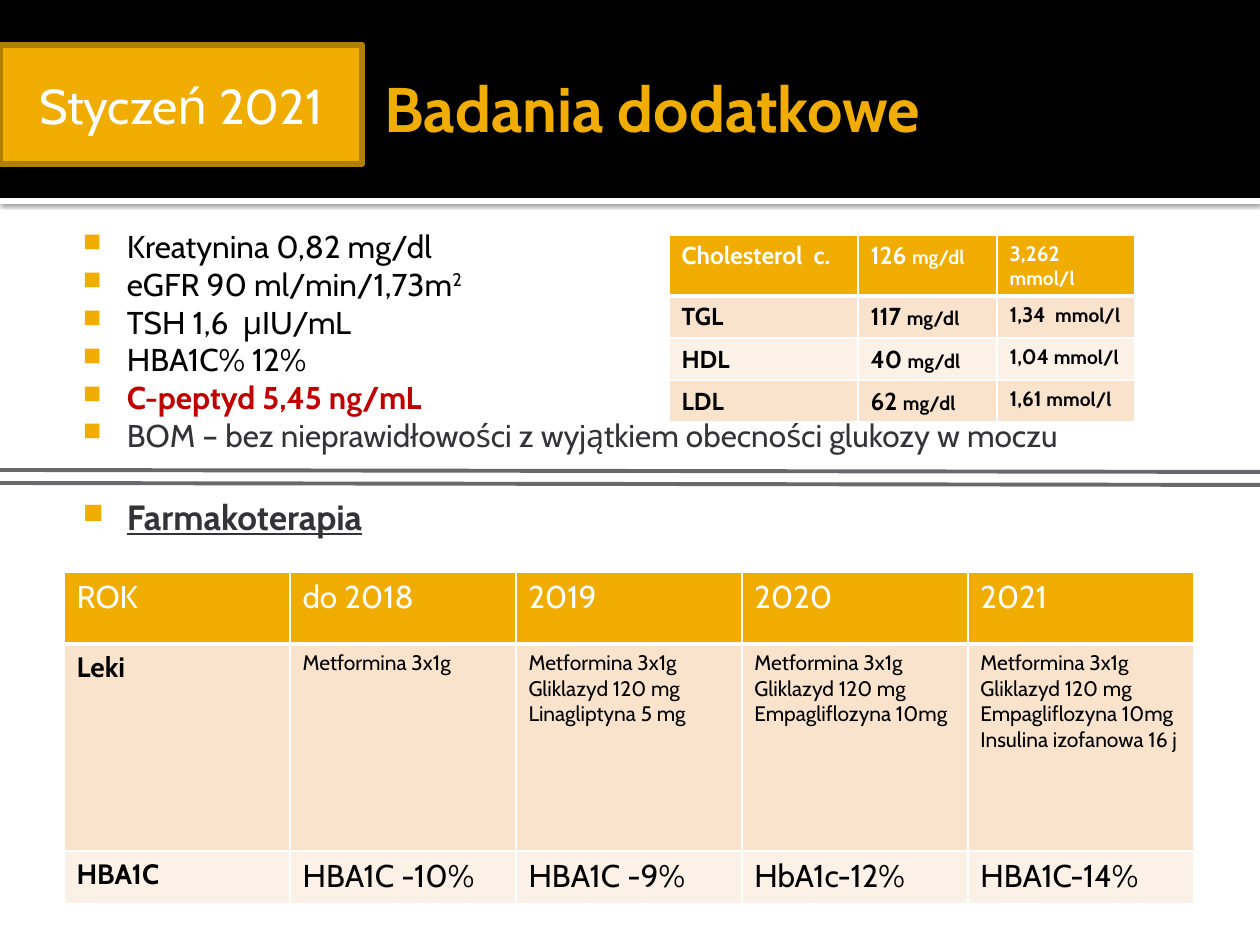
from lxml.etree import SubElement as Sub
from pptx import Presentation
from pptx.dml.color import RGBColor
from pptx.enum.shapes import MSO_CONNECTOR as LINE, MSO_SHAPE as SHAPE
from pptx.enum.text import MSO_ANCHOR as ANCHOR, PP_ALIGN as ALIGN
from pptx.oxml import parse_xml
from pptx.oxml.ns import nsdecls, qn
from pptx.util import Pt

GOLD, WHITE, BLACK, DARK, RED = "F0AD00", "FFFFFF", "000000", "343437", "C00000"
BANDS = ["F9E3CC", "FCF1E7"]
rgb = RGBColor.from_string


def px(*nums):
    return [round(n * 914400 / 126) for n in nums]


def write(par, text, size, hue, bold=False):
    run = par.add_run()
    run.text = text
    run.font.name = "Cabin"
    run.font.size = Pt(size)
    run.font.bold = bold
    run.font.color.rgb = rgb(hue)
    return run


deck = Presentation()
deck.slide_width, deck.slide_height = px(1260, 945)
slide = deck.slides.add_slide(deck.slide_layouts[6])
shapes = slide.shapes

bars = []
for spot, hue in [((0, 198, 1260, 6), WHITE), ((0, 0, 1260, 198), BLACK),
                  ((0, 45, 362, 119), GOLD)]:
    bar = shapes.add_shape(SHAPE.RECTANGLE, *px(*spot))
    bar.shadow.inherit = False
    bar.fill.solid()
    bar.fill.fore_color.rgb = rgb(hue)
    bar.line.fill.background()
    bars.append(bar)
strip, band, badge = bars

glow = strip._element.spPr.find(qn("a:effectLst"))
glow.append(parse_xml(
    f'<a:outerShdw {nsdecls("a")} blurRad="31750" dist="10160" dir="5400000">'
    '<a:srgbClr val="000000"><a:alpha val="60000"/></a:srgbClr></a:outerShdw>'))

badge.line.color.rgb = rgb("B28000")
badge.line.width = Pt(3.78)
badge.text_frame.vertical_anchor = ANCHOR.MIDDLE
par = badge.text_frame.paragraphs[0]
par.alignment = ALIGN.CENTER
write(par, "Styczeń 2021", 28, WHITE)

title = shapes.add_textbox(*px(372, 21, 825, 173)).text_frame
title.word_wrap = True
title.vertical_anchor = ANCHOR.MIDDLE
write(title.paragraphs[0], "Badania dodatkowe", 36, GOLD, True)

body = shapes.add_textbox(*px(59, 214, 1134, 638)).text_frame
body.word_wrap = True
body.margin_left, body.margin_top = px(8, 13)
items = [
    ("Kreatynina 0,82 mg/dl", 18, BLACK, False),
    ("eGFR 90 ml/min/1,73m", 18, BLACK, False),
    ("TSH 1,6  μIU/mL", 18, BLACK, False),
    ("HBA1C% 12%", 18, BLACK, False),
    ("C-peptyd 5,45 ng/mL", 18, RED, True),
    ("BOM – bez nieprawidłowości z wyjątkiem obecności glukozy w moczu", 18, DARK, False),
    ("Farmakoterapia", 20, DARK, True),
]
left, hang = px(60, -44)
for i, item in enumerate(items):
    par = body.paragraphs[0] if i == 0 else body.add_paragraph()
    run = write(par, *item)
    if item[0].endswith("73m"):
        write(par, "2", 18, BLACK).font._element.set("baseline", "30000")
    if item[0] == "Farmakoterapia":
        run.font.underline = True
        par.space_before = Pt(24)
    prop = par._p.get_or_add_pPr()
    prop.set("marL", str(left))
    prop.set("indent", str(hang))
    Sub(Sub(prop, qn("a:buClr")), qn("a:srgbClr")).set("val", GOLD)
    Sub(prop, qn("a:buSzPct")).set("val", "80000")
    Sub(prop, qn("a:buChar")).set("char", "■")

for ends in [(-1, 470, 1260, 472), (-15, 483, 1265, 485)]:
    rule = shapes.add_connector(LINE.STRAIGHT, *px(*ends))
    rule.line.color.rgb = rgb("68686D")
    rule.line.width = Pt(2.25)
    Sub(rule._element.spPr, qn("a:effectLst"))

lipids = []
for name, mass, mole in [("Cholesterol  c.", "126 ", "3,262 "), ("TGL", "117 ", "1,34  "),
                         ("HDL", "40 ", "1,04 "), ("LDL", "62 ", "1,61 ")]:
    lipids.append([[[(name, 14, True)]],
                   [[(mass, 14, True), ("mg/dl", 11, True)]],
                   [[(mole, 12, True), ("mmol/l", 11, True)]]])

met, gli, emp = "Metformina 3x1g", "Gliklazyd 120 mg", "Empagliflozyna 10mg"
doses = [[met], [met, gli, "Linagliptyna 5 mg"], [met, gli, emp],
         [met, gli, emp, "Insulina izofanowa 16 j"]]
levels = ["HBA1C -10%", "HBA1C -9%", "HbA1c-12%", "HBA1C-14%"]
drugs = [
    [[[(year, 18, False)]] for year in ["ROK", "do 2018", "2019", "2020", "2021"]],
    [[[("Leki", 16, True)]]] + [[[(drug, 12, False)] for drug in dose] for dose in doses],
    [[[("HBA1C", 16, True)]]] + [[[(level, 18, False)]] for level in levels],
]

for x, y, wides, highs, rows in [
        (669, 235, [189, 139, 138], [39, 39, 39, 18], lipids),
        (64, 572, [226] * 5, [72, 207, 53], drugs)]:
    spot = px(x, y, sum(wides), sum(highs))
    grid = shapes.add_table(len(highs), len(wides), *spot).table
    grid.first_row = grid.horz_banding = False
    for col, wide in zip(grid.columns, px(*wides)):
        col.width = wide
    for r, (row, high) in enumerate(zip(rows, px(*highs))):
        grid.rows[r].height = high
        for c, lines in enumerate(row):
            cell = grid.cell(r, c)
            prop = cell._tc.get_or_add_tcPr()
            for side in "LRTB":
                edge = Sub(prop, qn("a:ln" + side))
                edge.set("w", str(Pt(3 if r == 0 and side == "B" else 1)))
                Sub(Sub(edge, qn("a:solidFill")), qn("a:srgbClr")).set("val", WHITE)
            cell.fill.solid()
            cell.fill.fore_color.rgb = rgb(BANDS[(r - 1) % 2] if r else GOLD)
            for i, runs in enumerate(lines):
                frame = cell.text_frame
                par = frame.paragraphs[0] if i == 0 else frame.add_paragraph()
                for text, size, bold in runs:
                    write(par, text, size, BLACK if r else WHITE, bold)

deck.save("out.pptx")
